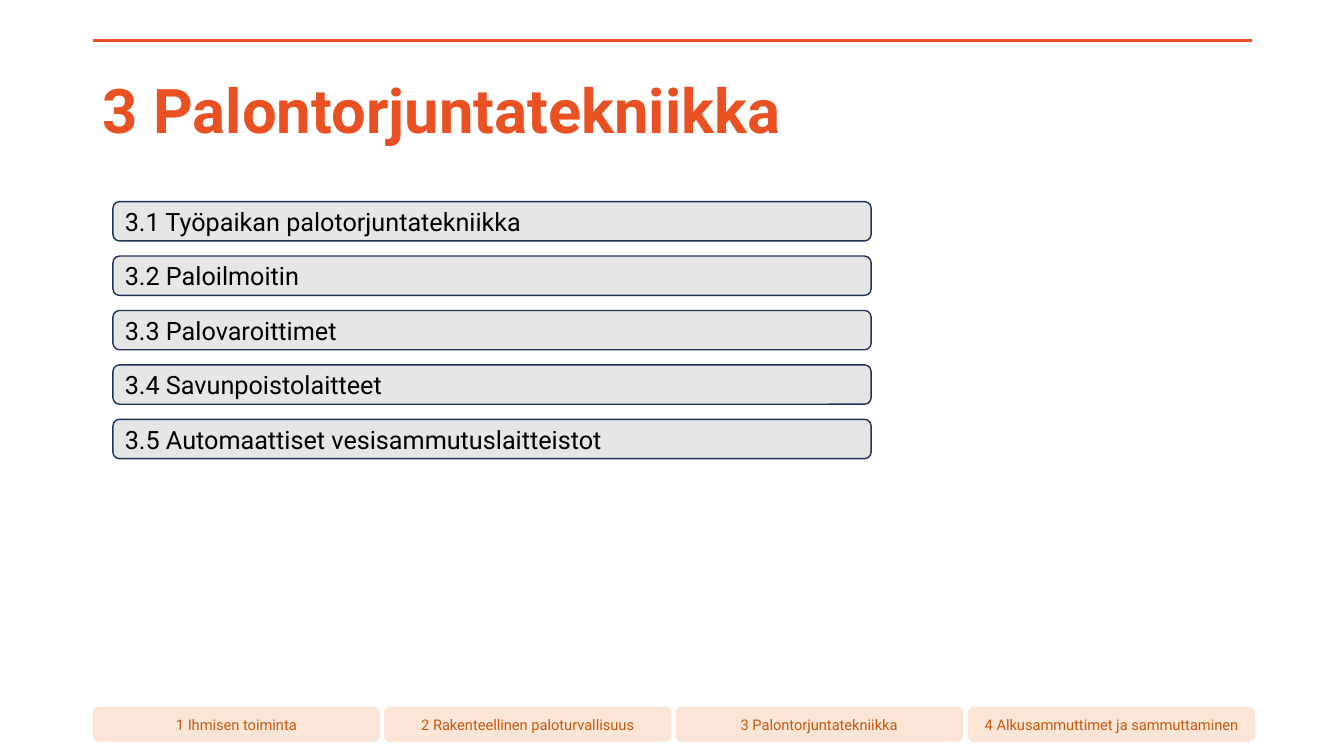
from lxml import etree
from pptx import Presentation
from pptx import util as u
from pptx.dml import color
from pptx.enum import shapes, text
from pptx.oxml import ns

PX = 9144  # EMU per px, 100 px to the inch
ORANGE = "E95123"
TOPICS = [
    "3.1 Työpaikan palotorjuntatekniikka",
    "3.2 Paloilmoitin",
    "3.3 Palovaroittimet",
    "3.4 Savunpoistolaitteet",
    "3.5 Automaattiset vesisammutuslaitteistot",
]
TABS = [
    "1 Ihmisen toiminta",
    "2 Rakenteellinen paloturvallisuus",
    "3 Palontorjuntatekniikka",
    "4 Alkusammuttimet ja sammuttaminen",
]


def px(*nums):
    return [u.Emu(n * PX) for n in nums]


def rgb(code):
    return color.RGBColor.from_string(code)


def write(shape, words, size, ink, align, bold=False, space=1.0):
    """Put one formatted paragraph, centred in height, into a shape."""
    frame = shape.text_frame
    frame.word_wrap = True
    frame.vertical_anchor = text.MSO_ANCHOR.MIDDLE
    para = frame.paragraphs[0]
    para.alignment = align
    para.line_spacing = space
    run = para.add_run()
    run.text = words
    look = {"name": "Roboto", "size": u.Pt(size), "bold": bold}
    for key, value in look.items():
        setattr(run.font, key, value)
    run.font.color.rgb = rgb(ink)


def add_rule(slide, left, top, right):
    rule = slide.shapes.add_connector(
        shapes.MSO_CONNECTOR.STRAIGHT, *px(left, top, right, top))
    rule.line.color.rgb = rgb(ORANGE)
    rule.line.width = u.Pt(2.5)
    etree.SubElement(rule._element.spPr, ns.qn("a:effectLst"))


def add_title(slide, words, box):
    title = slide.shapes.add_textbox(*px(*box))
    write(title, words, 44, ORANGE, text.PP_ALIGN.LEFT, True, 0.9)


def add_box(slide, words, box, fill, edge, size, ink, align):
    shape = slide.shapes.add_shape(
        shapes.MSO_SHAPE.ROUNDED_RECTANGLE, *px(*box))
    shape.shadow.inherit = False
    shape.fill.solid()
    shape.fill.fore_color.rgb = rgb(fill)
    if edge:
        shape.line.color.rgb = rgb(edge)
        shape.line.width = u.Pt(1)
    else:
        shape.line.fill.background()
    write(shape, words, size, ink, align)


def main():
    deck = Presentation()
    deck.slide_width, deck.slide_height = px(1333, 750)
    slide = deck.slides.add_slide(deck.slide_layouts[6])
    add_rule(slide, 92, 40, 1242)
    for i, words in enumerate(TABS):
        add_box(slide, words, (92 + 868 * i // 3, 701, 285, 35),
                "FBE5D6", None, 10.5, "C55A11", text.PP_ALIGN.CENTER)
    add_title(slide, "3 Palontorjuntatekniikka", (92, 40, 1150, 145))
    for i, words in enumerate(TOPICS):
        add_box(slide, words, (112, 200 + 54 * i, 752, 39),
                "E7E6E6", "1E3256", 18, "000000", text.PP_ALIGN.LEFT)
    deck.save("out.pptx")


if __name__ == "__main__":
    main()
